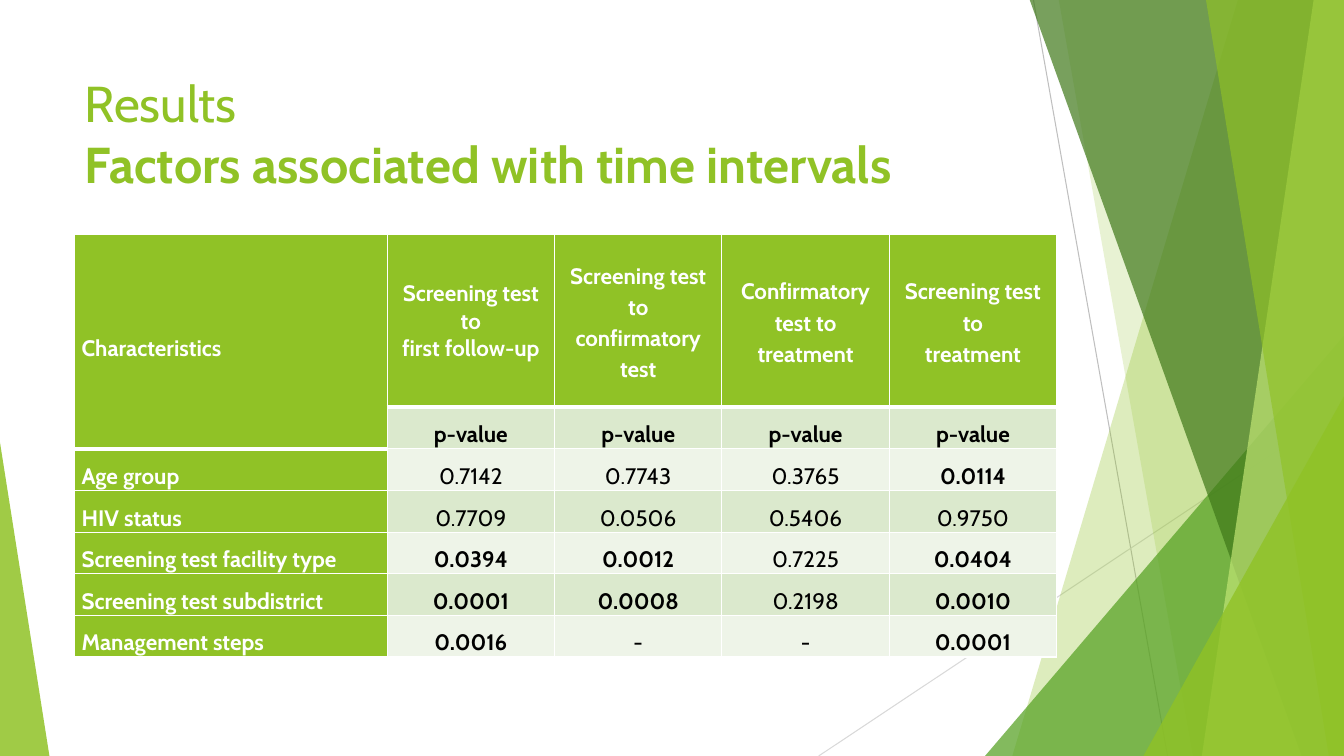
from lxml import etree
from pptx import Presentation
from pptx.dml.color import RGBColor
from pptx.enum import shapes, text
from pptx.oxml import ns
from pptx.util import Inches, Pt

LIME = RGBColor(0x90, 0xC2, 0x26)
GREEN = RGBColor(0x54, 0xA0, 0x21)
DARK = RGBColor(0x3F, 0x78, 0x19)
PALE = RGBColor(0xC0, 0xE4, 0x74)
BAND = RGBColor(0xDB, 0xE9, 0xCD)
LIGHT = RGBColor(0xEE, 0xF4, 0xE8)
GRAY = RGBColor(0xBF, 0xBF, 0xBF)
SILVER = RGBColor(0xD9, 0xD9, 0xD9)
WHITE = RGBColor(0xFF, 0xFF, 0xFF)
BLACK = RGBColor(0, 0, 0)
FONT = "Cabin"
WIDE, HIGH, TOP = 13.33, 7.5, -0.01

# Each header: line spacing and paragraphs
HEADS = [
    (1, ["Screening test", "to", "first follow-up"]),
    (1.15, ["Screening test to", "confirmatory test"]),
    (1.15, ["Confirmatory test to", "treatment"]),
    (1.15, ["Screening test to", "treatment"]),
]
FACTORS = [
    ("Age group", "0.7142", "0.7743", "0.3765", "0.0114"),
    ("HIV status", "0.7709", "0.0506", "0.5406", "0.9750"),
    ("Screening test facility type", "0.0394", "0.0012", "0.7225", "0.0404"),
    ("Screening test subdistrict", "0.0001", "0.0008", "0.2198", "0.0010"),
    ("Management steps", "0.0016", "-", "-", "0.0001"),
]


def add_run(para, words, size, color, bold):
    run = para.add_run()
    run.text = words
    font = run.font
    font.name, font.size, font.bold = FONT, Pt(size), bold
    font.color.rgb = color


def add_line(slide, start, end, color):
    points = [Inches(v) for v in start + end]
    line = slide.shapes.add_connector(shapes.MSO_CONNECTOR.STRAIGHT, *points)
    line.line.color.rgb = color
    line.line.width = Pt(0.75)
    etree.SubElement(line._element.spPr, ns.qn("a:effectLst"))


def tint(shape, color, alpha):
    shape.shadow.inherit = False
    shape.line.fill.background()
    shape.fill.solid()
    shape.fill.fore_color.rgb = color
    fill = shape._element.spPr.find(ns.qn("a:solidFill"))
    etree.SubElement(fill[0], ns.qn("a:alpha"), val=str(alpha * 1000))


def add_shard(slide, head, foot, color, alpha):
    """Fill the right edge of the slide from a slanted left side."""
    spots = [(WIDE, TOP), (WIDE, HIGH), (foot, HIGH)]
    form = slide.shapes.build_freeform(Inches(head), Inches(TOP), 1.0)
    form.add_line_segments([(Inches(x), Inches(y)) for x, y in spots])
    tint(form.convert_to_shape(), color, alpha)


def add_wedge(slide, left, top, width, apex, color, alpha):
    """Stand a triangle on the bottom of the slide."""
    wedge = slide.shapes.add_shape(
        shapes.MSO_SHAPE.ISOSCELES_TRIANGLE,
        Inches(left), Inches(top), Inches(width), Inches(HIGH - top))
    wedge.adjustments[0] = apex
    tint(wedge, color, alpha)


def add_title(slide):
    title = slide.shapes.title
    title.left, title.top = Inches(0.74), Inches(0.67)
    title.width, title.height = Inches(9.4), Inches(1.44)
    frame = title.text_frame
    frame.word_wrap = True
    frame.vertical_anchor = text.MSO_ANCHOR.TOP
    para = frame.paragraphs[0]
    para.alignment = text.PP_ALIGN.LEFT
    para.line_spacing = 1
    add_run(para, "Results", 36, LIME, False)
    para.add_line_break()
    add_run(para, "Factors associated with time intervals", 36, LIME, True)


def set_edges(cell, top, bottom):
    props = cell._tc.get_or_add_tcPr()
    for side, width in zip("LRTB", (1, 1, top, bottom)):
        edge = etree.SubElement(props, ns.qn("a:ln" + side), w=str(Pt(width)))
        fill = etree.SubElement(edge, ns.qn("a:solidFill"))
        etree.SubElement(fill, ns.qn("a:srgbClr"), val=str(WHITE))


def fill_cell(cell, lines, back, color, align, bold=True, gap=1.5, snug=True):
    cell.fill.solid()
    cell.fill.fore_color.rgb = back
    cell.vertical_anchor = text.MSO_ANCHOR.MIDDLE
    if snug:
        cell.margin_left = cell.margin_right = Inches(0.07)
        cell.margin_top = cell.margin_bottom = 0
    frame = cell.text_frame
    for i, words in enumerate(lines):
        para = frame.add_paragraph() if i else frame.paragraphs[0]
        para.alignment, para.line_spacing = align, gap
        add_run(para, words, 16, color, bold)


def add_grid(slide):
    rows, cols = len(FACTORS) + 2, len(HEADS) + 1
    grid = slide.shapes.add_table(rows, cols, Inches(0.74), Inches(2.33),
                                  Inches(9.75), Inches(4.19)).table
    for i, col in enumerate(grid.columns):
        col.width = Inches(1.66 if i else 3.1)
    for i, row in enumerate(grid.rows):
        row.height = Inches(0.413 if i else 1.71)

    # Heavy edge below the header, which is two rows deep in the first column
    for r in range(rows):
        for c in range(cols):
            last = 0 if c else 1
            set_edges(grid.cell(r, c), 3 if r == last + 1 else 1,
                      3 if r == last else 1)

    # Header rows
    left, mid = text.PP_ALIGN.LEFT, text.PP_ALIGN.CENTER
    grid.cell(0, 0).merge(grid.cell(1, 0))
    fill_cell(grid.cell(0, 0), ["Characteristics"], LIME, WHITE, left)
    for c, (gap, lines) in enumerate(HEADS, 1):
        fill_cell(grid.cell(0, c), lines, LIME, WHITE, mid, gap=gap, snug=False)
        fill_cell(grid.cell(1, c), ["p-value"], BAND, BLACK, mid)

    # Factor rows, with significant values in bold
    for r, (name, *values) in enumerate(FACTORS, 2):
        fill_cell(grid.cell(r, 0), [name], LIME, WHITE, text.PP_ALIGN.JUSTIFY)
        for c, value in enumerate(values, 1):
            bold = value != "-" and float(value) < 0.05
            back = BAND if r % 2 else LIGHT
            fill_cell(grid.cell(r, c), [value], back, BLACK, mid, bold)


def main():
    deck = Presentation()
    deck.slide_width, deck.slide_height = Inches(WIDE), Inches(HIGH)
    slide = deck.slides.add_slide(deck.slide_layouts[5])

    # Backdrop
    add_line(slide, (10.25, 0), (11.58, HIGH), GRAY)
    add_line(slide, (WIDE, 4.03), (8.12, HIGH), SILVER)
    add_shard(slide, 12.28, 10.04, LIME, 30)
    add_shard(slide, 10.5, 11.83, LIME, 20)
    add_wedge(slide, 9.77, 3.33, 3.56, 1, GREEN, 72)
    add_shard(slide, 10.21, 12.91, DARK, 70)
    add_shard(slide, 13.03, 11.92, PALE, 70)
    add_shard(slide, 11.96, 13.18, LIME, 65)
    add_wedge(slide, 11.34, 3.93, 1.99, 1, LIME, 80)
    add_wedge(slide, 0, 4.39, 0.49, 0, LIME, 85)

    # Content
    add_title(slide)
    add_grid(slide)
    deck.save("out.pptx")


if __name__ == "__main__":
    main()
